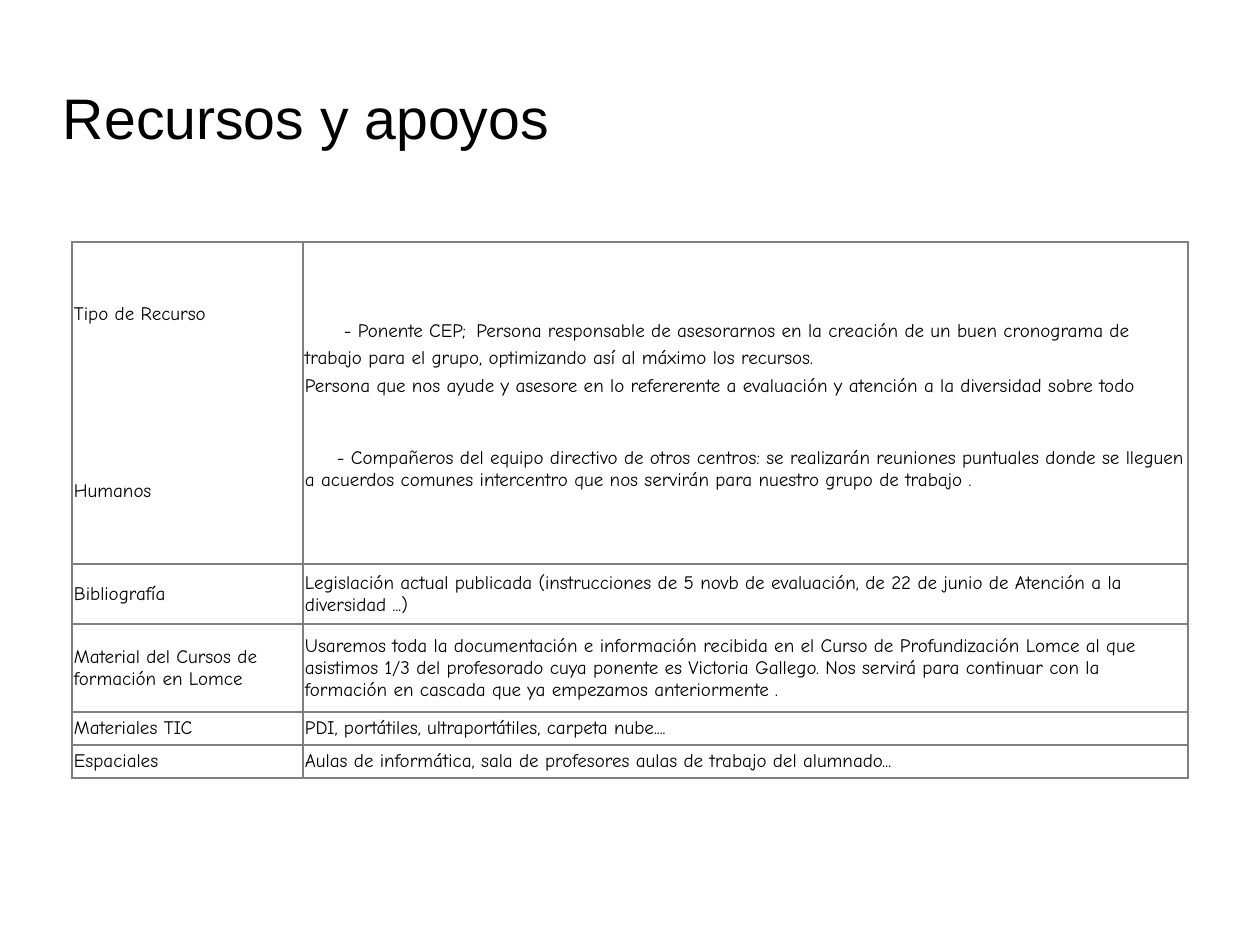
from dataclasses import dataclass
from lxml.etree import SubElement
from pptx import Presentation
from pptx.dml.color import RGBColor
from pptx.enum.text import MSO_ANCHOR, PP_ALIGN
from pptx.oxml import parse_xml
from pptx.oxml.ns import nsdecls, qn
from pptx.util import Emu, Pt


@dataclass(frozen=True)
class Theme:
    """Hold the colours, fonts and sizes of the slide."""
    ink: str = "000000"
    line: str = "808080"
    head: str = "Arial"
    body: str = "Comic Neue"
    big: int = 36
    small: int = 12
    edge: int = 1


@dataclass(frozen=True)
class Para:
    """Describe one paragraph of a cell."""
    text: str
    after: float = 0
    lead: float = 1
    indent: int = 0
    tab: int = 0


THEME = Theme()
COLS = [231, 885]
ROWS = [
    (322,
     [Para("Tipo de Recurso", after=98), Para("Humanos")],
     [Para("- Ponente CEP;\tPersona responsable de asesorarnos en la creación de un buen "
           "cronograma de trabajo para el grupo, optimizando así al máximo los recursos.",
           lead=1.25, indent=39, tab=179),
      Para("Persona que nos ayude y asesore en lo refererente a evaluación y atención "
           "a la diversidad sobre todo", after=31.5, lead=1.25),
      Para("- Compañeros del equipo directivo de otros centros: se realizarán reuniones "
           "puntuales donde se lleguen a acuerdos comunes intercentro que nos servirán "
           "para nuestro grupo de trabajo .", indent=32)]),
    (60,
     [Para("Bibliografía")],
     [Para("Legislación actual publicada (instrucciones de 5 novb de evaluación, "
           "de 22 de junio de Atención a la diversidad ...)")]),
    (88,
     [Para("Material del Cursos de formación en Lomce")],
     [Para("Usaremos toda la documentación e información recibida en el Curso de "
           "Profundización Lomce al que asistimos 1/3 del profesorado cuya ponente es "
           "Victoria Gallego. Nos servirá para continuar con la formación en cascada "
           "que ya empezamos anteriormente .")]),
    (33,
     [Para("Materiales TIC")],
     [Para("PDI, portátiles, ultraportátiles, carpeta nube....")]),
    (33,
     [Para("Espaciales")],
     [Para("Aulas de informática, sala de profesores aulas de trabajo del alumnado...")]),
]


def px(count):
    """Turn pixels into EMU."""
    return Emu(count * 8000)


def style(para, face, size):
    """Set the font of a paragraph."""
    font = para.font
    font.name, font.size, font.bold = face, Pt(size), False
    font.color.rgb = RGBColor.from_string(THEME.ink)


def pad(item, size):
    """Give a frame or cell equal margins on all sides."""
    item.margin_left = item.margin_right = px(size)
    item.margin_top = item.margin_bottom = px(size)
    item.vertical_anchor = MSO_ANCHOR.MIDDLE


def write(para, data):
    """Fill one cell paragraph from its description."""
    para.text = data.text
    para.alignment = PP_ALIGN.LEFT
    para.line_spacing = data.lead
    para.space_after = Pt(data.after)
    props = para._p.get_or_add_pPr()
    props.set("marL", "0")
    props.set("indent", str(px(data.indent)))
    if data.tab:
        stops = SubElement(props, qn("a:tabLst"))
        SubElement(stops, qn("a:tab"), pos=str(px(data.tab)), algn="l")
    style(para, THEME.body, THEME.small)


def frame(cell):
    """Draw the four borders of a cell and clear its fill."""
    props = cell._tc.get_or_add_tcPr()
    for spot, side in enumerate("LRTB"):
        props.insert(spot, parse_xml(
            f'<a:ln{side} {nsdecls("a")} w="{Pt(THEME.edge)}"><a:solidFill>'
            f'<a:srgbClr val="{THEME.line}"/></a:solidFill></a:ln{side}>'))
    cell.fill.background()


def fill(cell, paras):
    """Format a cell and write its paragraphs."""
    pad(cell, 2)
    frame(cell)
    text = cell.text_frame
    for spot, data in enumerate(paras):
        write(text.add_paragraph() if spot else text.paragraphs[0], data)


def title(slide, box, words):
    """Place the slide title in its box."""
    shape = slide.shapes.title
    shape.left, shape.top, shape.width, shape.height = map(px, box)
    text = shape.text_frame
    text.text = words
    text.word_wrap = True
    pad(text, 0)
    para = text.paragraphs[0]
    para.alignment = PP_ALIGN.LEFT
    style(para, THEME.head, THEME.big)


def table(slide, left, top):
    """Build the resource table from its top left corner."""
    high = sum(row[0] for row in ROWS)
    grid = slide.shapes.add_table(len(ROWS), len(COLS), px(left), px(top),
                                  px(sum(COLS)), px(high)).table
    grid.first_row = grid.horz_banding = False
    for col, wide in zip(grid.columns, COLS):
        col.width = px(wide)
    for row, (tall, *cells) in zip(grid.rows, ROWS):
        row.height = px(tall)
        for cell, paras in zip(row.cells, cells):
            fill(cell, paras)


def main():
    """Build the slide and save it."""
    deck = Presentation()
    deck.slide_width, deck.slide_height = px(1260), px(945)
    slide = deck.slides.add_slide(deck.slide_layouts[5])
    title(slide, (63, 72, 900, 90), "Recursos y apoyos")
    table(slide, 72, 242)
    deck.save("out.pptx")


if __name__ == "__main__":
    main()
